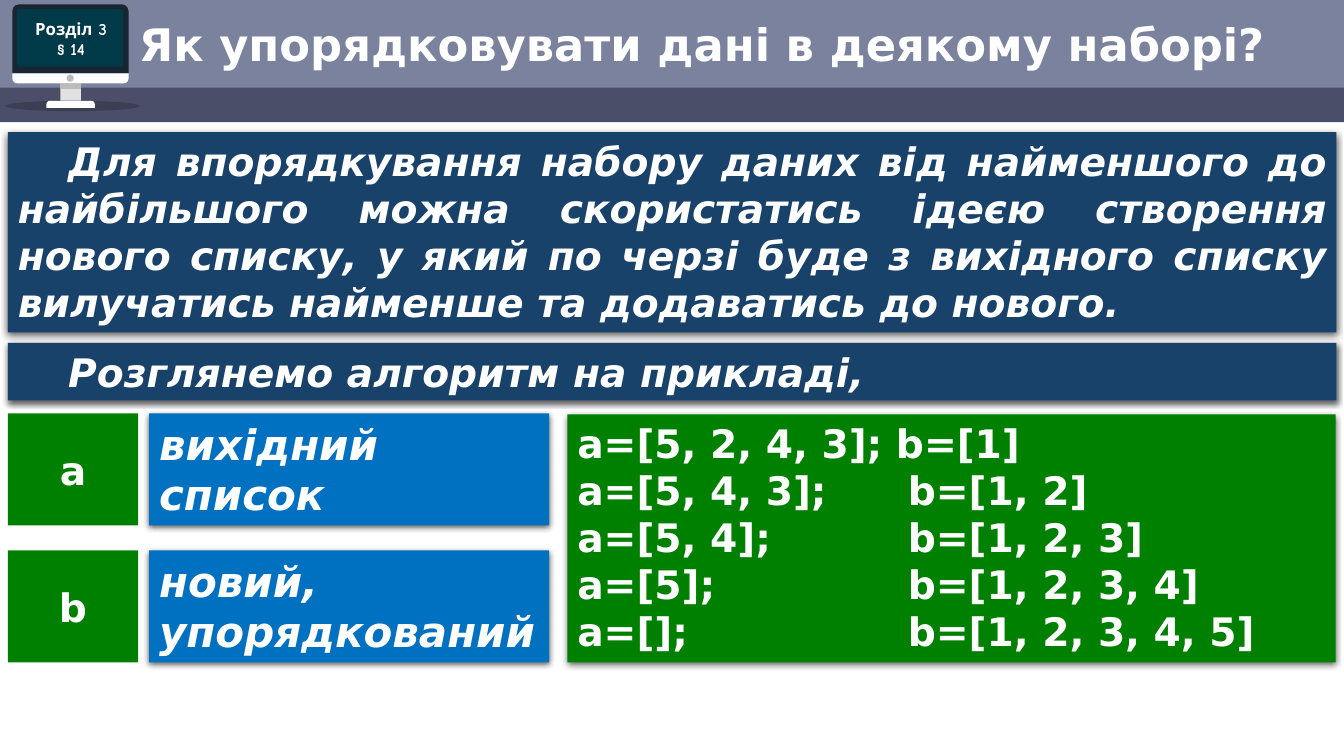
from lxml.etree import SubElement
from pptx import Presentation
from pptx.dml.color import RGBColor
from pptx.enum.shapes import MSO_SHAPE as Kind
from pptx.enum.text import MSO_ANCHOR as Anchor, PP_ALIGN as Align
from pptx.oxml.ns import qn
from pptx.util import Cm, Pt

HUES = {
    "band": "7B829D", "strip": "4B4E68", "black": "000000", "frame": "182632",
    "white": "FFFFFF", "neck": "E1E1E1", "gray": "BBBBBB", "screen": "003948",
    "navy": "19426B", "green": "008000", "blue": "0070C0",
}
BASE = {"size": Pt(28), "name": "DejaVu Sans", "bold": True}
SLANT = BASE | {"italic": True}
LARGE = SLANT | {"size": Pt(30)}
TITLE = BASE | {"size": Pt(32)}
BADGE = BASE | {"size": Pt(12), "name": "Comic Neue"}
INDENT = 1.27
TAB = 8.33

MONITOR = [
    (Kind.OVAL, (0.13, 2.54, 3.4, 0.26), "black", None),
    (Kind.ROUND_2_SAME_RECTANGLE, (0.31, 0.11, 2.93, 1.74), "frame", 0.1),
    (Kind.ROUND_2_SAME_RECTANGLE, (0.31, 1.85, 2.93, 0.25), "white", 0.5),
    (Kind.RECTANGLE, (1.52, 2.1, 0.52, 0.44), "neck", None),
    (Kind.RECTANGLE, (1.52, 2.1, 0.52, 0.14), "gray", None),
    (Kind.ROUND_2_SAME_RECTANGLE, (1.17, 2.54, 1.22, 0.18), "white", 0.5),
    (Kind.OVAL, (1.68, 1.88, 0.18, 0.18), "gray", None),
    (Kind.ROUNDED_RECTANGLE, (0.43, 0.23, 2.67, 1.45), "screen", 0.036),
]
STEPS = [
    "a=[5, 2, 4, 3]; b=[1]",
    "a=[5, 4, 3];\tb=[1, 2]",
    "a=[5, 4];\tb=[1, 2, 3]",
    "a=[5];\tb=[1, 2, 3, 4]",
    "a=[];\tb=[1, 2, 3, 4, 5]",
]
LISTS = [("а", "вихідний список"), ("b", "новий, упорядкований")]


def hue(name):
    return RGBColor.from_string(HUES[name])


def add_form(slide, kind, box, fill, round_by=None):
    form = slide.shapes.add_shape(kind, *map(Cm, box))
    form.shadow.inherit = False
    form.fill.solid()
    form.fill.fore_color.rgb = hue(fill)
    form.line.fill.background()
    if round_by is not None:
        form.adjustments[0] = round_by
    return form


def add_shade(form):
    effects = form._element.spPr.find(qn("a:effectLst"))
    shade = SubElement(effects, qn("a:outerShdw"), blurRad=str(Pt(4.5)),
                       dist=str(Pt(1.5)), dir="5400000", algn="t", rotWithShape="0")
    color = SubElement(shade, qn("a:srgbClr"), val=HUES["black"])
    SubElement(color, qn("a:alpha"), val="63000")


def put_text(form, lines, font, align=Align.LEFT, anchor=Anchor.TOP, indent=0, tab=0):
    frame = form.text_frame
    frame.word_wrap = True
    frame.vertical_anchor = anchor
    for place, line in enumerate(lines):
        para = frame.add_paragraph() if place else frame.paragraphs[0]
        para.alignment = align
        props = para._p.get_or_add_pPr()
        if indent:
            props.set("indent", str(Cm(indent)))
        if tab:
            stops = SubElement(props, qn("a:tabLst"))
            SubElement(stops, qn("a:tab"), pos=str(Cm(tab)), algn="l")
        run = para.add_run()
        run.text = line
        run.font.color.rgb = hue("white")
        for key, value in font.items():
            setattr(run.font, key, value)
    return frame


def add_label(slide, box, lines, font, align=Align.LEFT):
    label = slide.shapes.add_textbox(*map(Cm, box))
    return put_text(label, lines, font, align, Anchor.MIDDLE)


def add_panel(slide, box, fill, lines, font, shade=True, **layout):
    panel = add_form(slide, Kind.RECTANGLE, box, fill)
    if shade:
        add_shade(panel)
    put_text(panel, lines, font, **layout)


def add_header(slide):
    add_form(slide, Kind.RECTANGLE, (0, 0, 33.87, 2.31), "band")
    add_form(slide, Kind.RECTANGLE, (0, 2.21, 33.87, 0.87), "strip")
    parts = [add_form(slide, *part) for part in MONITOR]
    color = parts[0]._element.spPr.find(qn("a:solidFill"))[0]
    SubElement(color, qn("a:alpha"), val="20000")
    parts[2].rotation = 180
    add_label(slide, (0.33, 0.23, 2.92, 1.5), ["Розділ 3", "§ 14"], BADGE, Align.CENTER)
    title = add_label(slide, (3.25, 0.46, 29.77, 1.47),
                      ["Як упорядковувати дані в деякому наборі?"], TITLE)
    title.paragraphs[0].line_spacing = 0.9


def main():
    deck = Presentation()
    deck.slide_width, deck.slide_height = Cm(33.87), Cm(19.05)
    slide = deck.slides.add_slide(deck.slide_layouts[6])
    add_header(slide)
    add_panel(slide, (0.2, 3.33, 33.48, 5.05), "navy", [
        "Для впорядкування набору даних від найменшого до найбільшого можна "
        "скористатись ідеєю створення нового списку, у який по черзі буде з "
        "вихідного списку вилучатись найменше та додаватись до нового."
    ], SLANT, align=Align.JUSTIFY, indent=INDENT)
    add_panel(slide, (14.3, 10.44, 19.36, 6.25), "green", STEPS, BASE,
              align=Align.JUSTIFY, tab=TAB)
    add_panel(slide, (0.2, 8.64, 33.48, 1.45), "navy",
              ["Розглянемо алгоритм на прикладі,"], SLANT,
              align=Align.JUSTIFY, indent=INDENT)
    for row, (name, role) in enumerate(LISTS):
        top = 10.42 + row * 3.45
        add_panel(slide, (3.76, top, 10.08, 2.82), "blue", [role], LARGE)
        add_panel(slide, (0.2, top, 3.28, 2.82), "green", [name], BASE, shade=False,
                  align=Align.CENTER, anchor=Anchor.MIDDLE)
    deck.save("out.pptx")


if __name__ == "__main__":
    main()
